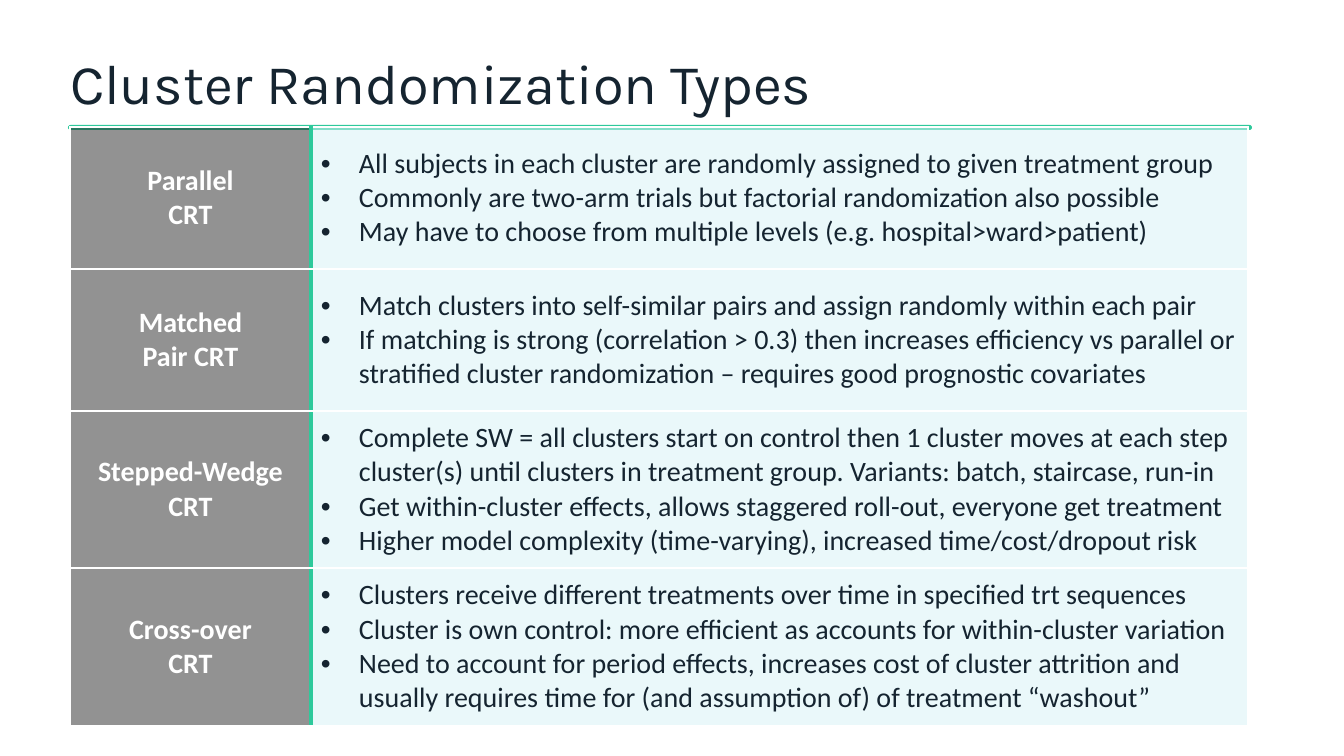
from lxml.etree import SubElement
from pptx import Presentation
from pptx.dml.color import RGBColor
from pptx.enum.shapes import MSO_SHAPE
from pptx.enum.text import MSO_ANCHOR, MSO_AUTO_SIZE, PP_ALIGN
from pptx.oxml.ns import qn
from pptx.util import Pt

# Content
TITLE = "Cluster Randomization Types"
DESIGNS = [
    ("Parallel\nCRT", [
        "All subjects in each cluster are randomly assigned to given treatment group",
        "Commonly are two-arm trials but factorial randomization also possible",
        "May have to choose from multiple levels (e.g. hospital>ward>patient)",
    ]),
    ("Matched\nPair CRT", [
        "Match clusters into self-similar pairs and assign randomly within each pair",
        "If matching is strong (correlation > 0.3) then increases efficiency vs parallel or "
        "stratified cluster randomization – requires good prognostic covariates",
    ]),
    ("Stepped-Wedge\nCRT", [
        "Complete SW = all clusters start on control then 1 cluster moves at each step "
        "cluster(s) until clusters in treatment group. Variants: batch, staircase, run-in",
        "Get within-cluster effects, allows staggered roll-out, everyone get treatment",
        "Higher model complexity (time-varying), increased time/cost/dropout risk",
    ]),
    ("Cross-over\nCRT", [
        "Clusters receive different treatments over time in specified trt sequences",
        "Cluster is own control: more efficient as accounts for within-cluster variation",
        "Need to account for period effects, increases cost of cluster attrition and "
        "usually requires time for (and assumption of) of treatment “washout”",
    ]),
]

# Look
INK = RGBColor(0x15, 0x24, 0x30)
GREEN = RGBColor(0x2E, 0xC9, 0x9B)
WHITE = RGBColor(0xFF, 0xFF, 0xFF)
GREY = RGBColor(0x26, 0x26, 0x26)
AQUA = RGBColor(0xD6, 0xF2, 0xF6)

# Lengths in px
PAGE_WIDTH, PAGE_HEIGHT = 1344, 756
RULE = (68, 125, 1184, 5)
TITLE_BOX = (70, 38, 1226, 79)
TABLE_LEFT, TABLE_TOP = 70, 127
COLUMN_WIDTHS = (241, 937)
ROW_HEIGHT = 142
CELL_MARGIN = 10
BULLET_INDENT = 38


def px(length):
    return round(length * 914400 / 100.8)


def place(shape, bounds):
    shape.left, shape.top, shape.width, shape.height = map(px, bounds)


def style(para, font, size, color, bold=False):
    for span in para.runs:
        span.font.name, span.font.size, span.font.bold = font, Pt(size), bold
        span.font.color.rgb = color


def fill_cell(cell, color, borders):
    """Half-transparent fill, with borders given as {side: (color, points)}."""
    cell.fill.solid()
    cell.fill.fore_color.rgb = color
    properties = cell._tc.get_or_add_tcPr()
    SubElement(properties.find(".//" + qn("a:srgbClr")), qn("a:alpha"), val="50000")
    sides = [side for side in "LRTB" if side in borders]
    for position, side in enumerate(sides):
        line_color, points = borders[side]
        line = SubElement(properties, qn("a:ln" + side), w=str(Pt(points)))
        paint = SubElement(line, qn("a:solidFill"))
        SubElement(paint, qn("a:srgbClr"), val=str(line_color))
        properties.insert(position, line)


def add_bullet(para):
    properties = para._p.get_or_add_pPr()
    properties.set("marL", str(px(BULLET_INDENT)))
    properties.set("indent", str(-px(BULLET_INDENT)))
    color = SubElement(properties, qn("a:buClr"))
    SubElement(color, qn("a:srgbClr"), val=str(INK))
    SubElement(properties, qn("a:buFont"), typeface="Arial")
    SubElement(properties, qn("a:buChar"), char="•")


def write_cell(cell, text, color, bold):
    cell.vertical_anchor = MSO_ANCHOR.MIDDLE
    cell.margin_left = cell.margin_right = px(CELL_MARGIN)
    cell.margin_top = cell.margin_bottom = px(CELL_MARGIN)
    cell.text_frame.text = text
    for para in cell.text_frame.paragraphs:
        style(para, "Calibri", 20, color, bold)


def main():
    deck = Presentation()
    deck.slide_width, deck.slide_height = px(PAGE_WIDTH), px(PAGE_HEIGHT)
    page = deck.slides.add_slide(deck.slide_layouts[5])

    # Title
    title = page.shapes.title
    place(title, TITLE_BOX)
    frame = title.text_frame
    frame.text = TITLE
    frame.word_wrap = True
    frame.auto_size = MSO_AUTO_SIZE.NONE
    frame.vertical_anchor = MSO_ANCHOR.BOTTOM
    frame.margin_left = frame.margin_right = frame.margin_top = frame.margin_bottom = 0
    heading = frame.paragraphs[0]
    heading.alignment = PP_ALIGN.LEFT
    heading.line_spacing = 0.9
    style(heading, "Karla", 40, INK)

    # Green rule under the title
    rule = page.shapes.add_shape(MSO_SHAPE.ROUNDED_RECTANGLE, *map(px, RULE))
    rule.adjustments[0] = 0.5
    rule.shadow.inherit = False
    rule.fill.solid()
    rule.fill.fore_color.rgb = GREEN
    rule.line.fill.background()

    # Table of designs
    bounds = (TABLE_LEFT, TABLE_TOP, sum(COLUMN_WIDTHS), ROW_HEIGHT * len(DESIGNS))
    table = page.shapes.add_table(len(DESIGNS), 2, *map(px, bounds)).table
    table.first_row = table.horz_banding = False
    for column, width in zip(table.columns, COLUMN_WIDTHS):
        column.width = px(width)

    for index, (name, points) in enumerate(DESIGNS):
        table.rows[index].height = px(ROW_HEIGHT)
        label, details = table.cell(index, 0), table.cell(index, 1)
        separators = {}
        if index > 0:
            separators["T"] = (WHITE, 1)
        if index < len(DESIGNS) - 1:
            separators["B"] = (WHITE, 1)

        write_cell(label, name, WHITE, True)
        for para in label.text_frame.paragraphs:
            para.alignment = PP_ALIGN.CENTER
        fill_cell(label, GREY, {**separators, "R": (GREEN, 3)})

        write_cell(details, "\n".join(points), INK, False)
        for para in details.text_frame.paragraphs:
            add_bullet(para)
        fill_cell(details, AQUA, {**separators, "L": (GREEN, 3)})

    deck.save("out.pptx")


if __name__ == "__main__":
    main()
